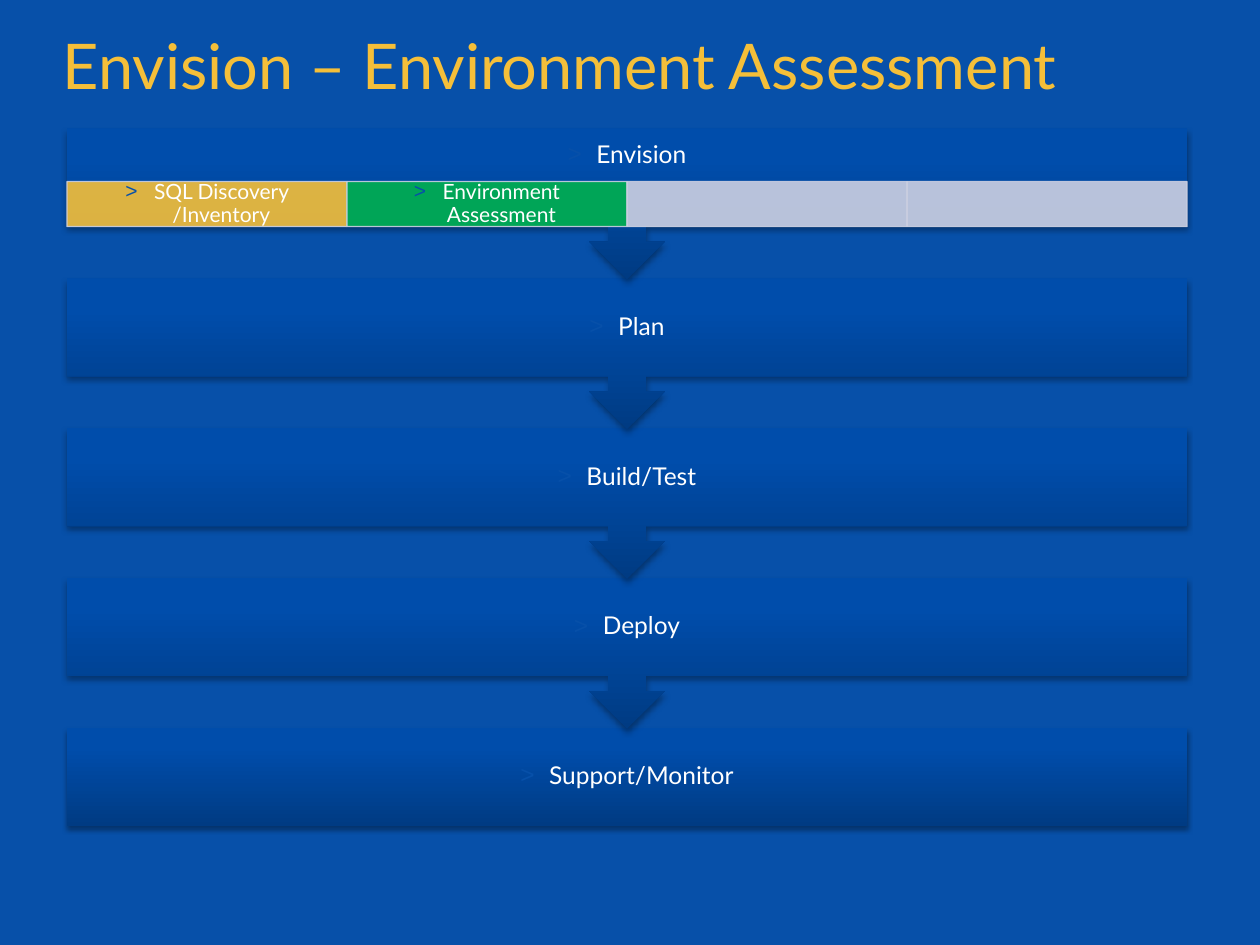
"""Build the environment assessment slide with its five migration phases."""
import pptx
import pptx.dml.color
import pptx.enum.shapes
import pptx.enum.text
import pptx.oxml
import pptx.oxml.ns
import pptx.util

Cm, Pt = pptx.util.Cm, pptx.util.Pt
RGBColor = pptx.dml.color.RGBColor
SHAPES = pptx.enum.shapes.MSO_SHAPE
CENTER = pptx.enum.text.PP_ALIGN.CENTER
MIDDLE = pptx.enum.text.MSO_ANCHOR.MIDDLE
NAMESPACE = pptx.oxml.ns.nsdecls("a")

BLUE = RGBColor(0x07, 0x50, 0xA9)
DARK_BLUE = RGBColor(0x00, 0x3B, 0x83)
PHASE_BLUE = RGBColor(0x00, 0x4D, 0xAB)
GOLD = RGBColor(0xF5, 0xBF, 0x39)
GREEN = RGBColor(0x00, 0xB0, 0x50)
PALE = RGBColor(0xCC, 0xD0, 0xE2)
WHITE = RGBColor(0xFF, 0xFF, 0xFF)

LEFT, WIDTH, TOP, PITCH = Cm(1.35), Cm(22.58), Cm(2.59), Cm(3.02)
BOX_HEIGHT, CALLOUT_HEIGHT, HEADING_HEIGHT = Cm(1.98), Cm(3.04), Cm(1.07)
STEP_HEIGHT = Cm(0.91)
PHASES = ["Envision", "Plan", "Build/Test", "Deploy", "Support/Monitor"]
STEPS = [("SQL Discovery /Inventory", GOLD), ("Environment Assessment", GREEN),
         ("", PALE), ("", PALE)]


def write_label(box, text, size, side, edge):
    frame = box.text_frame
    layout = {"word_wrap": True, "vertical_anchor": MIDDLE, "margin_left": side,
              "margin_right": side, "margin_top": edge, "margin_bottom": edge}
    for name, value in layout.items():
        setattr(frame, name, value)
    para = frame.paragraphs[0]
    properties = para._p.get_or_add_pPr()
    properties.set("marL", str(Cm(0.58)))
    properties.set("indent", str(-Cm(0.58)))
    for xml in (f'<a:buClr {NAMESPACE}><a:srgbClr val="{BLUE}"/></a:buClr>',
                f'<a:buFont {NAMESPACE} typeface="Arial"/>',
                f'<a:buChar {NAMESPACE} char="&gt;"/>'):
        properties.append(pptx.oxml.parse_xml(xml))
    para.alignment = CENTER
    para.line_spacing = 0.9
    span = para.add_run()
    span.text = text
    for name, value in {"size": Pt(size), "name": "Lato"}.items():
        setattr(span.font, name, value)
    span.font.color.rgb = WHITE


def set_alpha(fill):
    color = fill._xPr.find(".//" + pptx.oxml.ns.qn("a:srgbClr"))
    color.append(pptx.oxml.parse_xml(f'<a:alpha {NAMESPACE} val="90000"/>'))


deck = pptx.Presentation()
deck.slide_width, deck.slide_height = Cm(25.4), Cm(19.05)
page = deck.slides.add_slide(deck.slide_layouts[6])
page.background.fill.solid()
page.background.fill.fore_color.rgb = BLUE

title = page.shapes.add_textbox(Cm(1.02), Cm(0.64), Cm(23.32), Cm(1.57))
title.text_frame.word_wrap = True
para = title.text_frame.paragraphs[0]
para.line_spacing = 0.85
span = para.add_run()
span.text = "Envision – Environment Assessment"
for name, value in {"size": Pt(36), "name": "Lato"}.items():
    setattr(span.font, name, value)
span.font.color.rgb = GOLD

for index, phase in reversed(list(enumerate(PHASES))):
    top = TOP + index * PITCH
    is_last = index == len(PHASES) - 1
    kind = SHAPES.RECTANGLE if is_last else SHAPES.UP_ARROW_CALLOUT
    height = BOX_HEIGHT if is_last else CALLOUT_HEIGHT
    block = page.shapes.add_shape(kind, LEFT, top, WIDTH, height)
    block.rotation = 0 if is_last else 180
    block.line.fill.background()
    block.fill.gradient()
    block.fill.gradient_angle = 90
    for stop, color, position in zip(block.fill.gradient_stops,
                                     (DARK_BLUE, PHASE_BLUE), (0, 0.8)):
        stop.color.rgb = color
        stop.position = position
    properties = block._element.spPr
    properties.find(pptx.oxml.ns.qn("a:gradFill")).set("rotWithShape", "0")
    block.shadow.inherit = False
    properties.find(pptx.oxml.ns.qn("a:effectLst")).append(pptx.oxml.parse_xml(
        f'<a:outerShdw {NAMESPACE} blurRad="{Pt(3.1)}" dist="{Pt(1.8)}" '
        'dir="5400000" rotWithShape="0"><a:srgbClr val="000000">'
        '<a:alpha val="35000"/></a:srgbClr></a:outerShdw>'))
    label_height = HEADING_HEIGHT if index == 0 else BOX_HEIGHT
    label = page.shapes.add_textbox(LEFT, top, WIDTH, label_height)
    write_label(label, phase, 14, Cm(0.28), Cm(0.28))

step_width = WIDTH // len(STEPS)
for index, (step, color) in enumerate(STEPS):
    cell = page.shapes.add_shape(SHAPES.RECTANGLE, LEFT + index * step_width,
                                 TOP + HEADING_HEIGHT, step_width, STEP_HEIGHT)
    cell.shadow.inherit = False
    cell.fill.solid()
    cell.fill.fore_color.rgb = color
    set_alpha(cell.fill)
    cell.line.width = Pt(0.75)
    cell.line.color.rgb = PALE
    set_alpha(cell.line.fill)
    if step:
        write_label(cell, step, 12, Cm(0.23), Cm(0.05))

deck.save("out.pptx")
